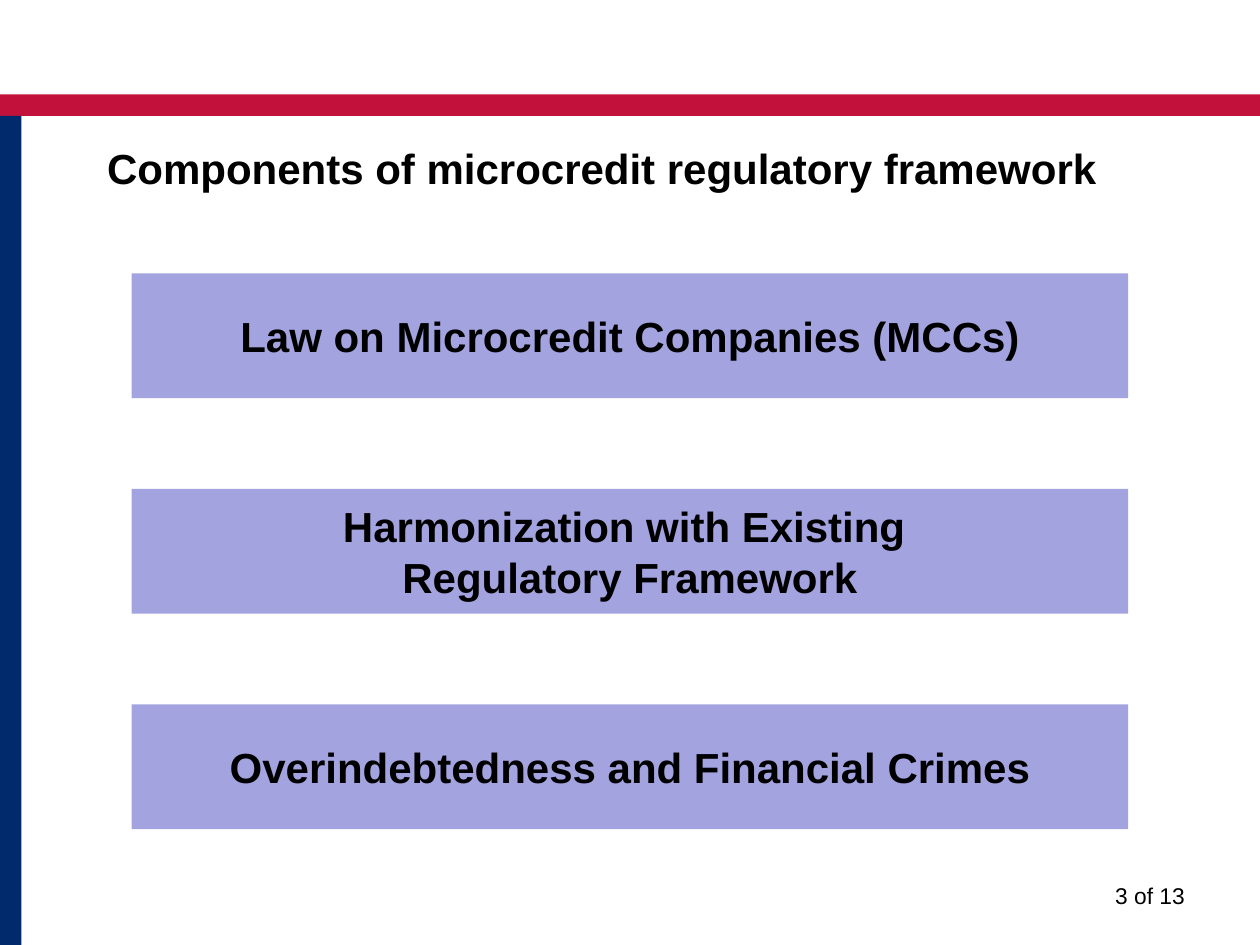
from pptx import Presentation
from pptx.dml.color import RGBColor
from pptx.enum.shapes import MSO_SHAPE as SHAPE
from pptx.enum.text import MSO_ANCHOR as ANCHOR, PP_ALIGN as ALIGN
from pptx.util import Inches, Pt


def write(shape, text, size=24, bold=True, align=ALIGN.CENTER, anchor=ANCHOR.MIDDLE):
    tf = shape.text_frame
    tf.word_wrap = True
    tf.vertical_anchor = anchor
    tf.text = text
    for p in tf.paragraphs:
        p.alignment = align
        for r in p.runs:
            r.font.name = "Arial"
            r.font.size = Pt(size)
            r.font.bold = bold
            r.font.color.rgb = RGBColor.from_string("000000")


def add_rect(s, left, top, width, height, color):
    sp = s.shapes.add_shape(SHAPE.RECTANGLE, *map(Inches, (left, top, width, height)))
    sp.fill.solid()
    sp.fill.fore_color.rgb = RGBColor.from_string(color)
    sp.line.fill.background()
    sp.shadow.inherit = False
    return sp


prs = Presentation()
W, H = 10, 7.5
prs.slide_width, prs.slide_height = Inches(W), Inches(H)
s = prs.slides.add_slide(prs.slide_layouts[5])

# Red band across the top, blue band down the left side
BAND_TOP, BAND_BOTTOM = 0.75, 0.92
add_rect(s, 0, BAND_TOP, W, BAND_BOTTOM - BAND_TOP, "C2113A")
add_rect(s, 0, BAND_BOTTOM, 0.17, H - BAND_BOTTOM, "002A6C")

title = s.shapes.title
title.left, title.top = Inches(0.75), Inches(1.08)
title.width, title.height = Inches(8.5), Inches(0.67)
write(title, "Components of microcredit regulatory framework",
      align=ALIGN.LEFT, anchor=ANCHOR.TOP)

# Components, centred on the slide in equal rows
components = [
    "Law on Microcredit Companies (MCCs)",
    "Harmonization with Existing \nRegulatory Framework",
    "Overindebtedness and Financial Crimes",
]
BOX_W, BOX_H = 7.91, 0.99
FIRST_ROW, ROW_STEP = 2.17, 1.71
for row, component in enumerate(components):
    box = add_rect(s, (W - BOX_W) / 2, FIRST_ROW + row * ROW_STEP, BOX_W, BOX_H, "A3A3E0")
    write(box, component)

page = s.shapes.add_textbox(Inches(7.17), Inches(6.95), Inches(2.33), Inches(0.4))
write(page, "3 of 13", size=13, bold=False, align=ALIGN.RIGHT, anchor=ANCHOR.TOP)

prs.save("out.pptx")
